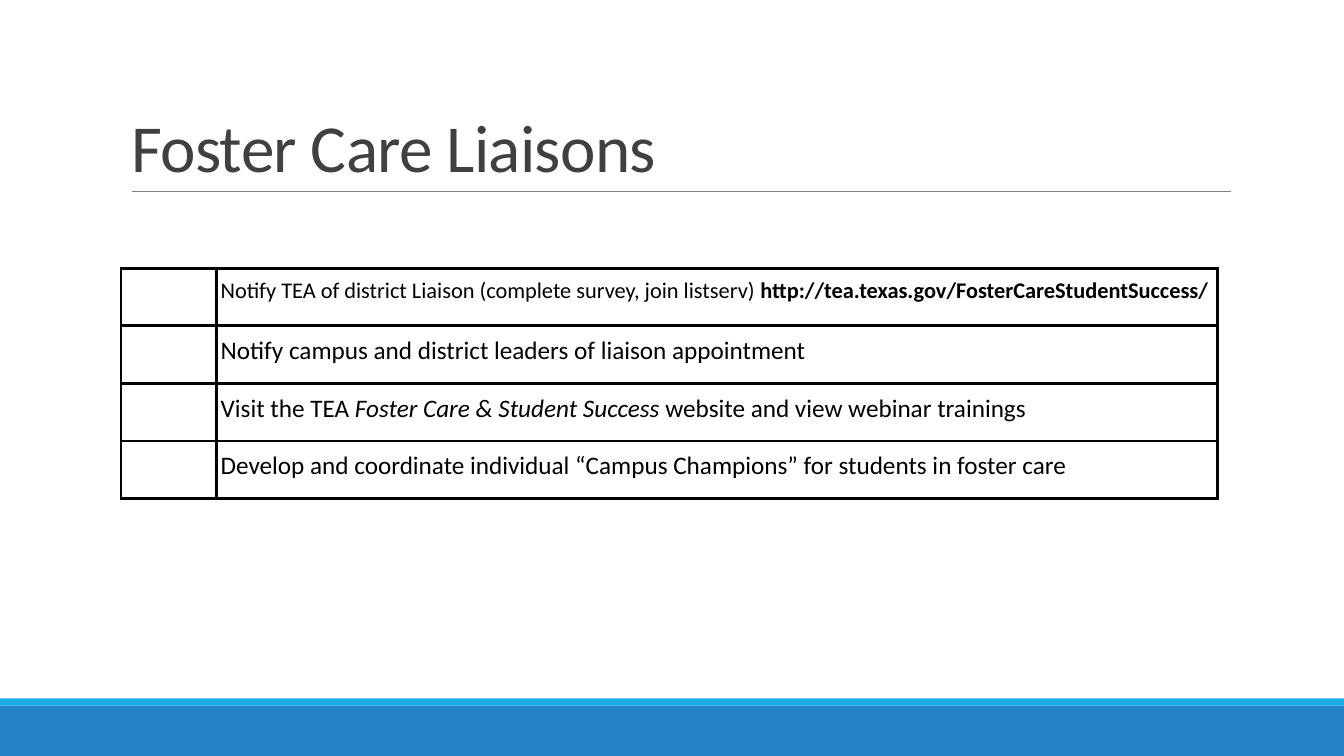
from dataclasses import dataclass

from lxml.etree import SubElement
from pptx import Presentation
from pptx.dml.color import RGBColor
from pptx.enum.shapes import MSO_CONNECTOR, MSO_SHAPE
from pptx.enum.text import MSO_ANCHOR, PP_ALIGN
from pptx.oxml.ns import qn
from pptx.slide import Slide
from pptx.table import _Cell
from pptx.text.text import _Paragraph
from pptx.util import Cm, Pt

SLIDE_WIDTH = 33.87
SLIDE_HEIGHT = 19.05
COLUMN_WIDTHS = (2.41, 25.23)
ROW_HEIGHT = 1.45


@dataclass
class Bar:
    top: float
    height: float
    color: str


@dataclass
class TextRun:
    text: str
    bold: bool = False
    italic: bool = False


@dataclass
class Task:
    size: int
    runs: list[TextRun]


BARS = [Bar(17.78, 1.27, "2683C6"), Bar(17.6, 0.18, "1CADE4")]

TASKS = [
    Task(16, [
        TextRun("Notify TEA of district Liaison (complete survey, join listserv) "),
        TextRun("http://tea.texas.gov/FosterCareStudentSuccess/", bold=True),
    ]),
    Task(18, [TextRun("Notify campus and district leaders of liaison appointment")]),
    Task(18, [
        TextRun("Visit the TEA "),
        TextRun("Foster Care & Student Success", italic=True),
        TextRun(" website and view webinar trainings"),
    ]),
    Task(18, [TextRun("Develop and coordinate individual “Campus Champions” for students in foster care")]),
]


def rgb(color: str) -> RGBColor:
    return RGBColor.from_string(color)


def add_run(paragraph: _Paragraph, text_run: TextRun, size: int, color: str) -> None:
    run = paragraph.add_run()
    run.text = text_run.text
    run.font.name = "Calibri"
    run.font.size = Pt(size)
    run.font.bold = text_run.bold
    run.font.italic = text_run.italic
    run.font.color.rgb = rgb(color)


def add_bar(slide: Slide, bar: Bar) -> None:
    shape = slide.shapes.add_shape(
        MSO_SHAPE.RECTANGLE, 0, Cm(bar.top), Cm(SLIDE_WIDTH), Cm(bar.height)
    )
    shape.shadow.inherit = False
    shape.fill.solid()
    shape.fill.fore_color.rgb = rgb(bar.color)
    shape.line.fill.background()


def add_title_rule(slide: Slide) -> None:
    rule = slide.shapes.add_connector(
        MSO_CONNECTOR.STRAIGHT, Cm(3.33), Cm(4.83), Cm(31.01), Cm(4.83)
    )
    rule.line.color.rgb = rgb("808080")
    rule.line.width = Pt(0.5)
    SubElement(rule._element.spPr, qn("a:effectLst"))


def format_title(slide: Slide) -> None:
    title = slide.shapes.title
    title.left, title.top, title.width, title.height = Cm(3.05), Cm(0.79), Cm(27.94), Cm(4.04)
    frame = title.text_frame
    frame.word_wrap = True
    frame.vertical_anchor = MSO_ANCHOR.BOTTOM
    paragraph = frame.paragraphs[0]
    paragraph.alignment = PP_ALIGN.LEFT
    paragraph.line_spacing = 0.85
    add_run(paragraph, TextRun("Foster Care Liaisons"), 48, "404040")
    paragraph.runs[0].font._element.set("spc", "-50")


def format_cell(cell: _Cell) -> None:
    cell.margin_left = cell.margin_right = cell.margin_top = cell.margin_bottom = Cm(0.1)
    properties = cell._tc.get_or_add_tcPr()
    for side in ("L", "R", "T", "B"):
        border = SubElement(properties, qn(f"a:ln{side}"), w=str(Pt(2.25)))
        fill = SubElement(border, qn("a:solidFill"))
        SubElement(fill, qn("a:srgbClr"), val="000000")
    cell.fill.background()


def fill_task(cell: _Cell, task: Task) -> None:
    paragraph = cell.text_frame.paragraphs[0]
    paragraph.line_spacing = 1.19
    paragraph.space_after = Pt(6)
    for text_run in task.runs:
        add_run(paragraph, text_run, task.size, "000000")


def add_task_table(slide: Slide) -> None:
    table = slide.shapes.add_table(
        len(TASKS), len(COLUMN_WIDTHS), Cm(3.05), Cm(6.76),
        Cm(sum(COLUMN_WIDTHS)), Cm(ROW_HEIGHT * len(TASKS)),
    ).table
    table.first_row = False
    table.horz_banding = False
    for column, width in zip(table.columns, COLUMN_WIDTHS):
        column.width = Cm(width)
    for row, task in zip(table.rows, TASKS):
        row.height = Cm(ROW_HEIGHT)
        for cell in row.cells:
            format_cell(cell)
        fill_task(row.cells[1], task)


def main() -> None:
    presentation = Presentation()
    presentation.slide_width = Cm(SLIDE_WIDTH)
    presentation.slide_height = Cm(SLIDE_HEIGHT)
    slide = presentation.slides.add_slide(presentation.slide_layouts[5])
    for bar in BARS:
        add_bar(slide, bar)
    add_title_rule(slide)
    format_title(slide)
    add_task_table(slide)
    presentation.save("out.pptx")


if __name__ == "__main__":
    main()
